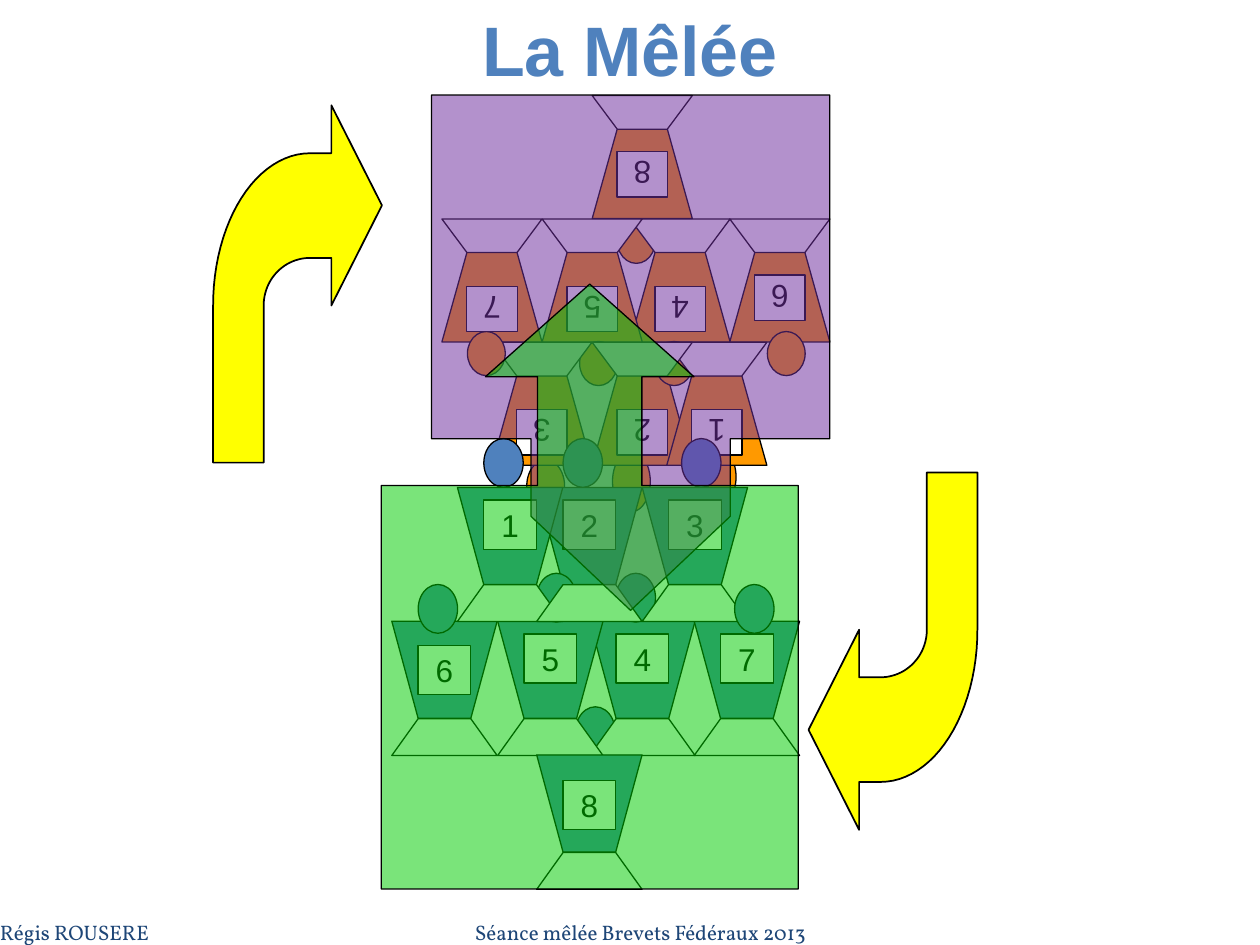
from dataclasses import dataclass
from math import cos, pi, sin

from lxml import etree
from pptx import Presentation
from pptx.dml.color import RGBColor
from pptx.enum.shapes import MSO_SHAPE
from pptx.enum.text import MSO_ANCHOR, PP_ALIGN
from pptx.oxml.ns import qn
from pptx.util import Pt

OVAL = MSO_SHAPE.OVAL
RECT = MSO_SHAPE.RECTANGLE
CALLOUT = MSO_SHAPE.RIGHT_ARROW_CALLOUT
MIDDLE, BOTTOM = MSO_ANCHOR.MIDDLE, MSO_ANCHOR.BOTTOM
LEFT, CENTER = PP_ALIGN.LEFT, PP_ALIGN.CENTER


@dataclass(frozen=True)
class Theme:
    orange: str = "FF9900"
    blue: str = "4F81BD"
    white: str = "FFFFFF"
    black: str = "000000"
    yellow: str = "FFFF00"
    purple: str = "7030A0"
    green: str = "00CC00"
    navy: str = "1E4677"
    sans: str = "Arial"
    serif: str = "Vollkorn"
    title: int = 40
    number: int = 18
    footer: int = 12


@dataclass(frozen=True)
class Team:
    color: str
    angle: int
    width: float
    body: float
    legs: float
    head: tuple
    label: tuple
    body_tops: tuple
    legs_tops: tuple
    columns: tuple
    drop: float
    drops: dict
    back_heads: tuple
    middle_heads: tuple
    front_heads: tuple


T = Theme()
ROW_OF_PLAYER = (0, 0, 0, 1, 1, 1, 1, 2)

ORANGE_TEAM = Team(
    color=T.orange, angle=180, width=57.2, body=51.2, legs=19.2,
    head=(21.6, 25.2), label=(28.8, 25.9),
    body_tops=(214.7, 144.2, 73.7), legs_tops=(195.6, 125.1, 54.6),
    columns=(381, 338.4, 281, 360, 309.8, 417, 252.5, 338.4),
    drop=19.4, drops={6: 13, 8: 13},
    back_heads=((404, 257.8, 16.6, 29.5), (350, 257.8, 21.6, 34.6),
                (301, 262.8, 21.6, 29.5), (352.8, 125.3)),
    middle_heads=((374.4, 195.1), (331.2, 195.1)),
    front_heads=((438.5, 189.4), (267.1, 189.4)))

BLUE_TEAM = Team(
    color=T.blue, angle=0, width=60.2, body=55.5, legs=21,
    head=(22.5, 27.9), label=(30.1, 28.1),
    body_tops=(278.6, 355, 431.4), legs_tops=(334.1, 410.7, 487.2),
    columns=(261.4, 306.7, 367, 337, 284.4, 223.9, 396.7, 306.7),
    drop=7.2, drops={6: 13.7, 8: 14.4},
    back_heads=((329, 403.9), (276.5, 250.6)),
    middle_heads=((321.8, 250.6), (389.5, 250.6),
                  (306.7, 327.6), (352.1, 327.6)),
    front_heads=((239, 334), (419.8, 334)))
BLUE_TEAM.columns and None


def paint(sp, color, line=0.75, angle=0, opacity=None):
    sp.shadow.inherit = False
    sp.rotation = angle
    sp.fill.solid()
    sp.fill.fore_color.rgb = RGBColor.from_string(color)
    sp.line.color.rgb = RGBColor.from_string(T.black)
    sp.line.width = Pt(line)
    if opacity is not None:
        clr = sp.fill._xPr.find(qn("a:solidFill"))[0]
        etree.SubElement(clr, qn("a:alpha"), val=str(opacity * 1000))


def write(tf, text, size, font, color, align=CENTER, anchor=BOTTOM,
          bold=False, wrap=True, inset=None):
    tf.word_wrap = wrap
    tf.vertical_anchor = anchor
    if inset is not None:
        tf.margin_left = tf.margin_right = Pt(inset)
        tf.margin_top = tf.margin_bottom = Pt(inset)
    p = tf.paragraphs[0]
    p.alignment = align
    r = p.add_run()
    r.text = text
    r.font.size = Pt(size)
    r.font.name = font
    r.font.bold = bold
    r.font.color.rgb = RGBColor.from_string(color)


def text_box(shapes, text, box, **fmt):
    sp = shapes.add_textbox(*map(Pt, box))
    write(sp.text_frame, text, **fmt)


def preset(shapes, kind, box, color, **fmt):
    sp = shapes.add_shape(kind, *map(Pt, box))
    paint(sp, color, **fmt)
    return sp


def polygon(shapes, points, color, **fmt):
    points = [(Pt(x), Pt(y)) for x, y in points]
    builder = shapes.build_freeform(*points[0])
    builder.add_line_segments(points[1:], close=True)
    paint(builder.convert_to_shape(), color, **fmt)


def trapezoid(shapes, x, y, w, h, wide_top, color, angle):
    wide, narrow = (y, y + h) if wide_top else (y + h, y)
    points = [(x, wide), (x + w / 4, narrow),
              (x + 3 * w / 4, narrow), (x + w, wide)]
    polygon(shapes, points, color, angle=angle)


def add_team(shapes, team):
    def heads(boxes):
        for box in boxes:
            x, y, *size = box
            preset(shapes, OVAL, (x, y, *(size or team.head)), team.color,
                   angle=team.angle)

    def bodies(*players):
        for n in players:
            trapezoid(shapes, team.columns[n - 1],
                      team.body_tops[ROW_OF_PLAYER[n - 1]], team.width,
                      team.body, True, team.color, team.angle)

    def legs(*players):
        for n in players:
            trapezoid(shapes, team.columns[n - 1],
                      team.legs_tops[ROW_OF_PLAYER[n - 1]], team.width,
                      team.legs, False, T.white, team.angle)

    heads(team.back_heads)
    bodies(2, 3, 4, 5)
    legs(4, 5)
    heads(team.middle_heads)
    bodies(1, 6, 7, 8)
    legs(1, 2, 3)
    heads(team.front_heads)
    legs(7, 6, 8)
    for n, (column, row) in enumerate(zip(team.columns, ROW_OF_PLAYER), 1):
        x = column + (team.width - team.label[0]) / 2
        y = team.body_tops[row] + team.drops.get(n, team.drop)
        sp = preset(shapes, RECT, (x, y, *team.label), T.white,
                    angle=team.angle)
        write(sp.text_frame, str(n), T.number, T.sans, T.black,
              anchor=MIDDLE, wrap=False)


def quarter(cx, cy, rx, ry, steps=24):
    angles = [pi / 2 * i / steps for i in range(steps + 1)]
    return [(cx - rx * sin(a), cy - ry * cos(a)) for a in angles]


def bent_arrow(shapes, x, y, angle):
    cx, cy = x + 55.4, y + 114.4
    neck, shaft = x + 67.6, x + 28.9
    points = [(x + 96.5, y + 57.2), (neck, y), (neck, y + 27.4),
              *quarter(cx, cy, 55.4, 87),
              (x, y + 204.2), (shaft, y + 204.2),
              *reversed(quarter(cx, cy, 26.5, 27.2)),
              (neck, y + 87.2), (neck, cy)]
    polygon(shapes, points, T.yellow, line=1, angle=angle)


def push_arrow(shapes, box, color, opacity, angle, adjustments):
    sp = preset(shapes, CALLOUT, box, color, angle=angle, opacity=opacity)
    for i, value in enumerate(adjustments):
        sp.adjustments[i] = value


def main():
    prs = Presentation()
    prs.slide_width, prs.slide_height = Pt(720), Pt(540)
    shapes = prs.slides.add_slide(prs.slide_layouts[6]).shapes

    for team in (ORANGE_TEAM, BLUE_TEAM):
        add_team(shapes.add_group_shape().shapes, team)
    bent_arrow(shapes, 121.8, 60.2, 0)
    bent_arrow(shapes, 462, 270, 180)

    footer = dict(size=T.footer, font=T.serif, color=T.navy, inset=0)
    text_box(shapes, "Séance mêlée Brevets Fédéraux 2013",
             (234, 511.2, 264.2, 28.8), **footer)
    text_box(shapes, "Régis ROUSERE", (0, 511.2, 167.8, 28.8),
             align=LEFT, **footer)

    push_arrow(shapes, (213.1, 87.8, 294.5, 227.5), T.purple, 53, 90,
               (0.5, 0.25, 0.236, 0.667))
    push_arrow(shapes, (164.2, 216, 345.6, 238.3), T.green, 52, 270,
               (0.25, 0.25, 0.222, 0.667))
    text_box(shapes, "La Mêlée", (133.2, 0, 453.6, 55.4), size=T.title,
             font=T.sans, color=T.blue, bold=True)
    prs.save("out.pptx")


if __name__ == "__main__":
    main()
